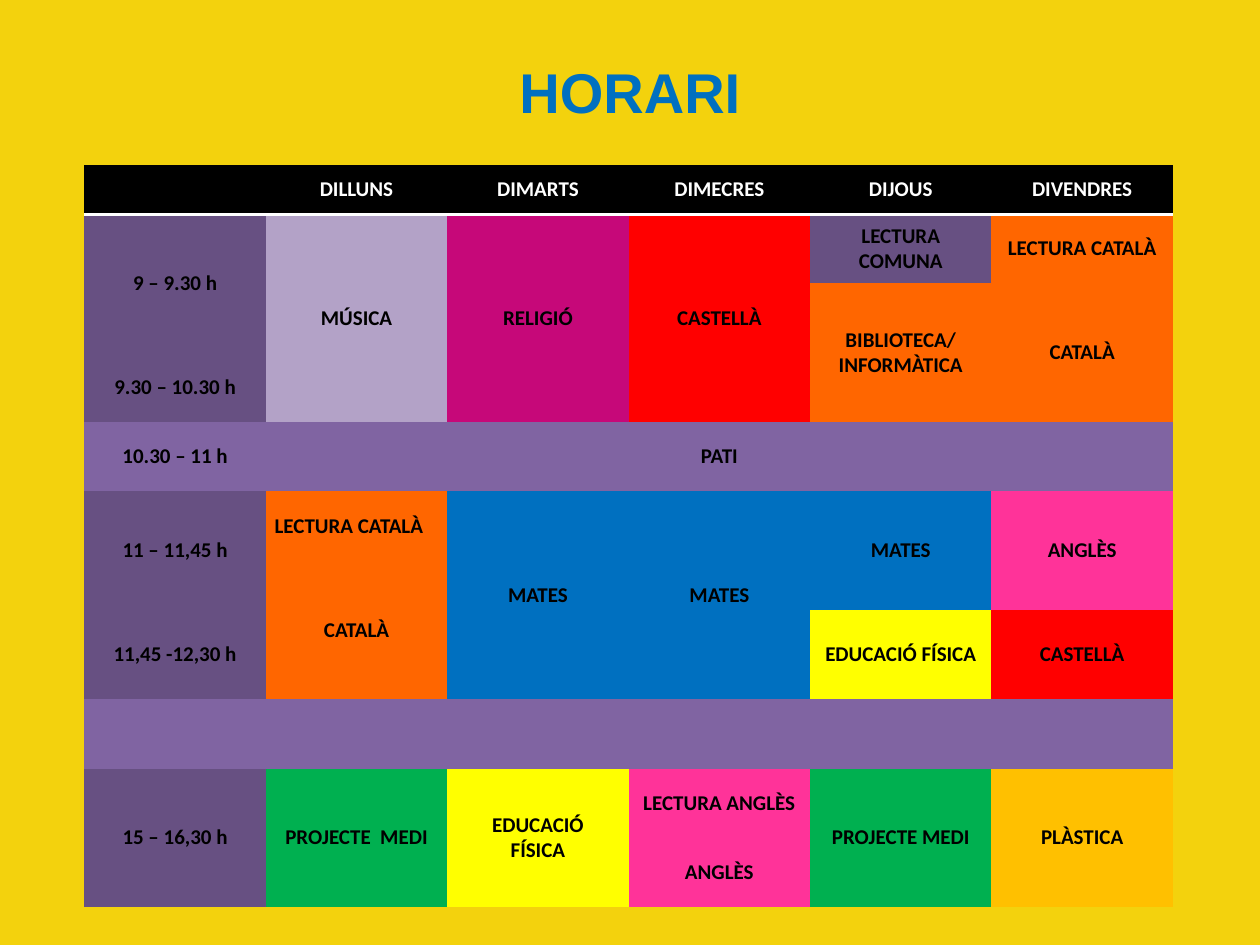
import pptx
import pptx.dml.color
import pptx.enum.text
import pptx.oxml
import pptx.oxml.ns
import pptx.util

Inches = pptx.util.Inches
ALIGN = pptx.enum.text.PP_ALIGN
MIDDLE = pptx.enum.text.MSO_ANCHOR.MIDDLE
NO_GRID_STYLE = "{2D5ABB26-0587-4C30-8999-92F81FD0307C}"

HEADER, TIME, BREAK = "000000", "675082", "8064A2"
CATALAN, SPANISH, ENGLISH, MATHS = "FF6600", "FF0000", "FF3399", "0070C0"
MUSIC, RELIGION, SPORT, PROJECT, ART = "B3A2C7", "C60879", "FFFF00", "00B050", "FFC000"

COLUMN_COUNT = 6
ROW_HEIGHTS = [0.39] + [0.55] * 5 + [0.39, 0.71] + [0.55] * 3
DAYS = ["", "DILLUNS", "DIMARTS", "DIMECRES", "DIJOUS", "DIVENDRES"]

LESSONS = [
    (1, 0, 2, 1, TIME, "9 – 9.30 h"),
    (1, 1, 3, 1, MUSIC, "MÚSICA"),
    (1, 2, 3, 1, RELIGION, "RELIGIÓ"),
    (1, 3, 3, 1, SPANISH, "CASTELLÀ"),
    (1, 4, 1, 1, TIME, "LECTURA COMUNA"),
    (1, 5, 1, 1, CATALAN, "LECTURA CATALÀ"),
    (2, 4, 2, 1, CATALAN, "BIBLIOTECA/\nINFORMÀTICA"),
    (2, 5, 2, 1, CATALAN, "CATALÀ"),
    (3, 0, 1, 1, TIME, "9.30 – 10.30 h"),
    (4, 0, 1, 1, BREAK, "10.30 – 11 h"),
    (4, 1, 1, 5, BREAK, "PATI"),
    (5, 0, 2, 1, TIME, "11 – 11,45 h"),
    (5, 1, 1, 1, CATALAN, "LECTURA CATALÀ"),
    (5, 2, 3, 1, MATHS, "MATES"),
    (5, 3, 3, 1, MATHS, "MATES"),
    (5, 4, 2, 1, MATHS, "MATES"),
    (5, 5, 2, 1, ENGLISH, "ANGLÈS"),
    (6, 1, 2, 1, CATALAN, "CATALÀ"),
    (7, 0, 1, 1, TIME, "11,45 -12,30 h"),
    (7, 4, 1, 1, SPORT, "EDUCACIÓ FÍSICA"),
    (7, 5, 1, 1, SPANISH, "CASTELLÀ"),
    (8, 0, 1, 6, BREAK, ""),
    (9, 0, 2, 1, TIME, "15 – 16,30 h"),
    (9, 1, 2, 1, PROJECT, "PROJECTE  MEDI"),
    (9, 2, 2, 1, SPORT, "EDUCACIÓ\nFÍSICA"),
    (9, 3, 1, 1, ENGLISH, "LECTURA ANGLÈS"),
    (9, 4, 2, 1, PROJECT, "PROJECTE MEDI"),
    (9, 5, 2, 1, ART, "PLÀSTICA"),
    (10, 3, 1, 1, ENGLISH, "ANGLÈS"),
]


def color(hex_text):
    return pptx.dml.color.RGBColor.from_string(hex_text)


def apply(target, values):
    for name, value in values.items():
        setattr(target, name, value)


class TimetableSlide:
    title_font = {"name": "Arial", "size": pptx.util.Pt(32), "bold": True}
    cell_font = {"name": "Calibri", "size": pptx.util.Pt(12), "bold": True}
    cell_format = {
        "margin_left": Inches(0.07),
        "margin_right": Inches(0.07),
        "margin_top": 0,
        "margin_bottom": 0,
        "vertical_anchor": MIDDLE,
    }

    def __init__(self, presentation, background):
        self.slide = presentation.slides.add_slide(presentation.slide_layouts[6])
        self.paint(self.slide.background.fill, background)

    def paint(self, fill, hex_text):
        fill.solid()
        fill.fore_color.rgb = color(hex_text)

    def set_text(self, frame, text, font, hex_text, alignment=ALIGN.CENTER):
        frame.text = text
        for paragraph in frame.paragraphs:
            paragraph.alignment = alignment
            for run in paragraph.runs:
                apply(run.font, font)
                run.font.color.rgb = color(hex_text)

    def title(self, text, left, top, width, height, hex_text):
        shape = self.slide.shapes.add_textbox(*map(Inches, (left, top, width, height)))
        apply(shape.text_frame, {"word_wrap": True, "vertical_anchor": MIDDLE})
        self.set_text(shape.text_frame, text, self.title_font, hex_text)

    def table(self, left, top, column_width, row_heights):
        shape = self.slide.shapes.add_table(
            len(row_heights), COLUMN_COUNT, Inches(left), Inches(top),
            Inches(column_width * COLUMN_COUNT), Inches(sum(row_heights)))
        table = shape.table
        style = next(shape.element.iter(pptx.oxml.ns.qn("a:tableStyleId")))
        style.text = NO_GRID_STYLE
        for column in table.columns:
            column.width = Inches(column_width)
        for row, height in zip(table.rows, row_heights):
            row.height = Inches(height)
        for cell in table.iter_cells():
            apply(cell, self.cell_format)
        return table

    def cell(self, cell, text, fill, hex_text="000000", alignment=ALIGN.CENTER):
        self.paint(cell.fill, fill)
        self.set_text(cell.text_frame, text, self.cell_font, hex_text, alignment)

    def underline(self, cell, hex_text, points):
        line = pptx.oxml.parse_xml(
            f'<a:lnB {pptx.oxml.ns.nsdecls("a")} w="{pptx.util.Pt(points)}">'
            f'<a:solidFill><a:srgbClr val="{hex_text}"/></a:solidFill></a:lnB>')
        cell._tc.get_or_add_tcPr().insert(0, line)


def main():
    presentation = pptx.Presentation()
    apply(presentation, {"slide_width": Inches(10), "slide_height": Inches(7.5)})
    timetable = TimetableSlide(presentation, "F3D20D")
    timetable.title("HORARI", 0.75, 0.29, 8.5, 0.87, "0070C0")
    table = timetable.table(0.67, 1.31, 1.44, ROW_HEIGHTS)

    for column, day in enumerate(DAYS):
        header = table.cell(0, column)
        timetable.cell(header, day, HEADER, "FFFFFF")
        timetable.underline(header, "FFFFFF", 2)

    for row, column, height, width, fill, text in LESSONS:
        lesson = table.cell(row, column)
        if height * width > 1:
            lesson.merge(table.cell(row + height - 1, column + width - 1))
        alignment = ALIGN.LEFT if (row, column) == (5, 1) else ALIGN.CENTER
        timetable.cell(lesson, text, fill, alignment=alignment)

    presentation.save("out.pptx")


if __name__ == "__main__":
    main()
